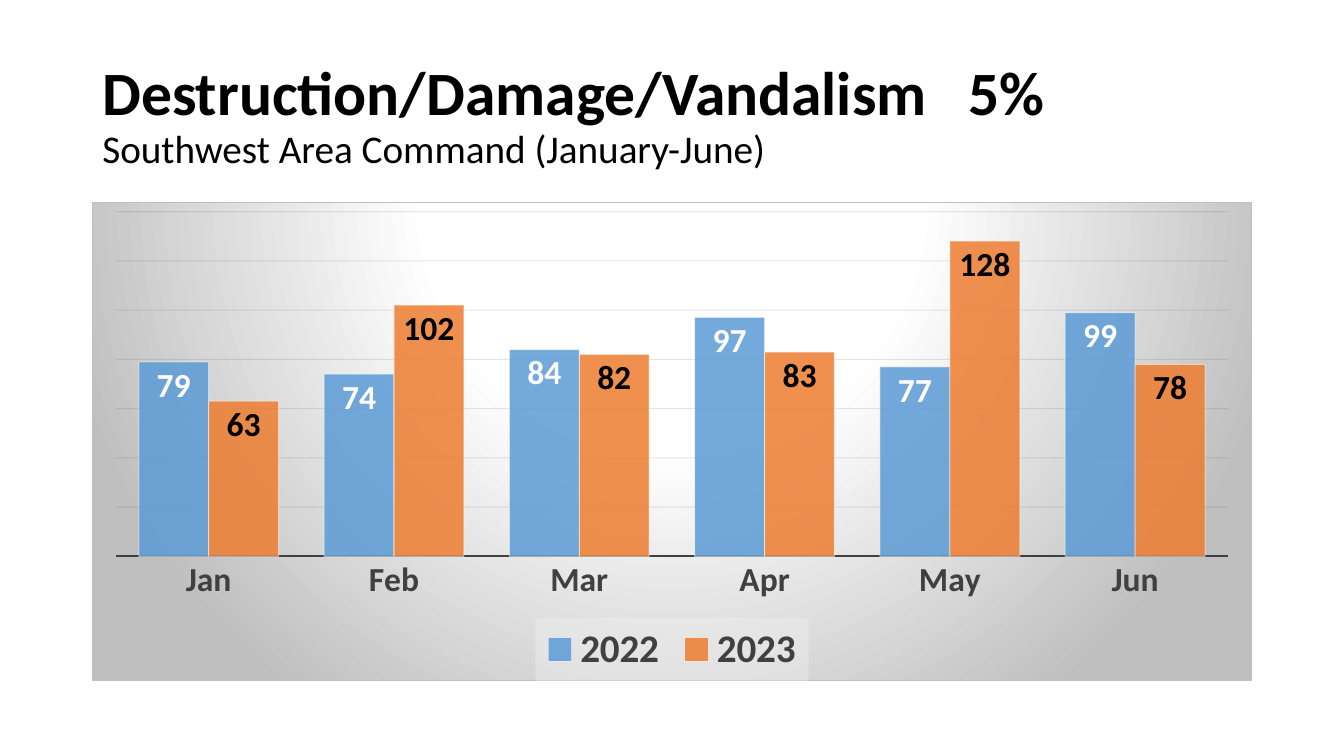
from lxml import etree
from pptx import Presentation
from pptx import util as u
from pptx.chart.data import CategoryChartData
from pptx.dml.color import RGBColor
from pptx.enum import chart as ch
from pptx.enum import text
from pptx.oxml import parse_xml
from pptx.oxml.ns import nsdecls, qn

PX = 9525
FONT = "Calibri"
COLORS = {
    "black": "000000", "white": "FFFFFF", "axis": "404040", "grid": "0D0D0D",
    "edge": "BFBFBF", "legend": "F2F2F2", "2022": "5B9BD5", "2023": "ED7D31",
}
MONTHS = ["Jan", "Feb", "Mar", "Apr", "May", "Jun"]
OFFENSES = {"2022": [79, 74, 84, 97, 77, 99], "2023": [63, 102, 82, 83, 128, 78]}
LABEL_COLORS = {"2022": "white", "2023": "black"}


def px(*lengths):
    return [u.Emu(length * PX) for length in lengths]


def rgb(name):
    return RGBColor.from_string(COLORS[name])


def style_font(font, size, color, bold):
    font.name = FONT
    font.size = u.Pt(size)
    font.bold = bold
    font.color.rgb = rgb(color)


def paint(fmt, color, opacity=100):
    fmt.solid()
    fmt.fore_color.rgb = rgb(color)


def set_opacity(properties, percent):
    color = properties.find(qn("a:solidFill")).find(qn("a:srgbClr"))
    etree.SubElement(color, qn("a:alpha")).set("val", str(percent * 1000))


def style_line(line, color, points):
    line.width = u.Pt(points)
    line.color.rgb = rgb(color)


def add_heading(slide, box):
    frame = slide.shapes.add_textbox(*px(*box)).text_frame
    frame.word_wrap = True
    frame.vertical_anchor = text.MSO_ANCHOR.MIDDLE
    heading = frame.paragraphs[0]
    heading.line_spacing = 0.9
    heading.font.name = FONT
    heading.font.color.rgb = rgb("black")
    heading._p.get_or_add_pPr().append(parse_xml(
        f'<a:tabLst {nsdecls("a")}><a:tab pos="{825 * PX}" algn="l"/></a:tabLst>'))
    tab_list = heading._p.pPr.find(qn("a:tabLst"))
    heading._p.pPr.find(qn("a:defRPr")).addprevious(tab_list)
    offense = heading.add_run()
    offense.text = "Destruction/Damage/Vandalism\t5%"
    style_font(offense.font, 44, "black", True)
    heading.add_line_break()
    command = heading.add_run()
    command.text = "Southwest Area Command (January-June)"
    style_font(command.font, 28, "black", False)


def add_backdrop(chart):
    stops = "".join(
        f'<a:gs pos="{pos * 1000}"><a:srgbClr val="{COLORS[color]}"/></a:gs>'
        for pos, color in [(0, "white"), (39, "white"), (100, "edge")])
    chart._chartSpace.find(qn("c:chart")).addnext(parse_xml(
        f'<c:spPr {nsdecls("c", "a")}><a:gradFill><a:gsLst>{stops}</a:gsLst>'
        '<a:path path="circle"><a:fillToRect l="50000" t="-80000" r="50000" b="180000"/>'
        '</a:path></a:gradFill><a:ln w="9525"><a:solidFill>'
        f'<a:srgbClr val="{COLORS["edge"]}"/></a:solidFill></a:ln></c:spPr>'))


def place_plot(chart, x, y, w, h):
    area = chart._chartSpace.chart.plotArea
    for layout in area.findall(qn("c:layout")):
        area.remove(layout)
    sizes = "".join(f'<c:{key} val="{value}"/>'
                    for key, value in zip("xywh", (x, y, w, h)))
    area.insert(0, parse_xml(
        f'<c:layout {nsdecls("c")}><c:manualLayout><c:layoutTarget val="inner"/>'
        f'<c:xMode val="edge"/><c:yMode val="edge"/>{sizes}</c:manualLayout></c:layout>'))


def style_axes(chart):
    months = chart.category_axis
    months.major_tick_mark = ch.XL_TICK_MARK.NONE
    months.has_major_gridlines = False
    style_font(months.tick_labels.font, 24, "axis", True)
    style_line(months.format.line, "axis", 1.5)
    counts = chart.value_axis
    counts.minimum_scale, counts.maximum_scale, counts.major_unit = 0, 140, 20
    counts.visible = False
    counts.has_major_gridlines = True
    grid = counts.major_gridlines.format.line
    style_line(grid, "grid", 0.75)
    set_opacity(grid._get_or_add_ln(), 10)


def style_year(year):
    year.smooth = False
    year.invert_if_negative = False
    paint(year.format.fill, year.name)
    style_line(year.format.line, "white", 0.75)
    set_opacity(year._element.spPr, 85)
    set_opacity(year.format.line._get_or_add_ln(), 50)
    labels = year.data_labels
    labels.show_value = True
    labels.position = ch.XL_LABEL_POSITION.INSIDE_END
    style_font(labels.font, 24, LABEL_COLORS[year.name], True)


def style_legend(chart):
    chart.has_legend = True
    legend = chart.legend
    legend.position = ch.XL_LEGEND_POSITION.BOTTOM
    legend.include_in_layout = False
    style_font(legend.font, 28, "axis", True)
    legend._element.find(qn("c:txPr")).addprevious(parse_xml(
        f'<c:spPr {nsdecls("c", "a")}><a:solidFill><a:srgbClr val="{COLORS["legend"]}">'
        '<a:alpha val="39000"/></a:srgbClr></a:solidFill></c:spPr>'))


def add_offense_chart(slide, box):
    data = CategoryChartData()
    data.categories = MONTHS
    for year, counts in OFFENSES.items():
        data.add_series(year, counts)
    chart = slide.shapes.add_chart(
        ch.XL_CHART_TYPE.COLUMN_CLUSTERED, *px(*box), data).chart
    chart.has_title = False
    style_font(chart.font, 10, "black", False)
    bars = chart.plots[0]
    bars.vary_by_categories = False
    bars.gap_width = 65
    bars.overlap = 0
    for year in bars.series:
        style_year(year)
    style_axes(chart)
    style_legend(chart)
    place_plot(chart, 0.02, 0.02, 0.96, 0.72)
    add_backdrop(chart)


def main():
    deck = Presentation()
    deck.slide_width, deck.slide_height = px(1280, 720)
    slide = deck.slides.add_slide(deck.slide_layouts[6])
    add_heading(slide, (88, 42, 1104, 139))
    add_offense_chart(slide, (88, 192, 1104, 457))
    deck.save("out.pptx")


if __name__ == "__main__":
    main()
